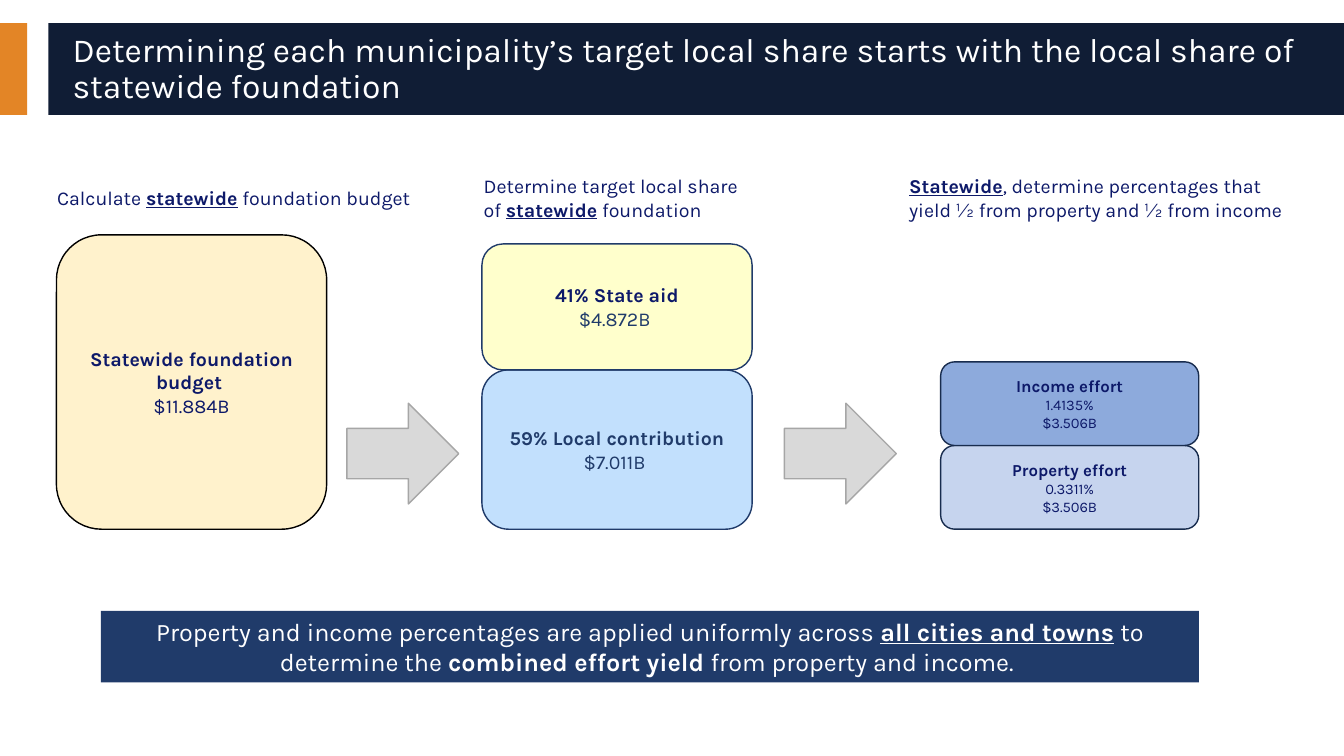
"""Build the slide on the target local share of the statewide foundation budget."""
from dataclasses import dataclass

from pptx import Presentation
from pptx.dml.color import RGBColor
from pptx.enum.shapes import MSO_SHAPE
from pptx.enum.text import MSO_ANCHOR, MSO_AUTO_SIZE, PP_ALIGN
from pptx.util import Inches, Pt

RECT = MSO_SHAPE.RECTANGLE
ROUND = MSO_SHAPE.ROUNDED_RECTANGLE
ARROW = MSO_SHAPE.RIGHT_ARROW
LEFT, CENTER = PP_ALIGN.LEFT, PP_ALIGN.CENTER
MIDDLE = MSO_ANCHOR.MIDDLE
FIXED, GROW = MSO_AUTO_SIZE.NONE, MSO_AUTO_SIZE.SHAPE_TO_FIT_TEXT

FONT = "Karla"
INK, NAVY, WHITE = "0D1969", "203B6A", "FFFFFF"
EFFORT_LINE = "182C4E"
BASELINE = 5.25
BAR_TOP, BAR_HEIGHT = 0.23, 0.91
LABEL_TOP, LABEL_HEIGHT = 1.67, 0.58
ARROW_LEFTS = (3.44, 7.78)


@dataclass(frozen=True)
class Span:
    """A stretch of text in one format."""
    text: str
    size: float = 14
    color: str = INK
    bold: bool = False
    underline: bool = False


@dataclass(frozen=True)
class Block:
    """A shape with its place, colours and paragraphs of spans."""
    left: float
    top: float
    width: float
    height: float
    kind: int = RECT
    fill: str = ""
    line: str = ""
    paras: tuple = ()
    align: int = CENTER
    fit: int = FIXED


@dataclass(frozen=True)
class Layer:
    """One box of a stack: height, colour and paragraphs."""
    height: float
    fill: str
    paras: tuple


@dataclass(frozen=True)
class Stack:
    """Boxes piled upward from the baseline."""
    left: float
    width: float
    line: str
    layers: tuple


def color(code: str) -> RGBColor:
    """Turn a hex string into a colour."""
    return RGBColor.from_string(code)


def write(frame, paras: tuple, align: int, spacing: float = 1.0) -> None:
    """Fill a text frame with formatted paragraphs."""
    for index, spans in enumerate(paras):
        para = frame.paragraphs[0] if index == 0 else frame.add_paragraph()
        para.alignment, para.line_spacing = align, spacing
        for span in spans:
            for number, piece in enumerate(span.text.split("\n")):
                if number:
                    para.add_line_break()
                run = para.add_run()
                run.text = piece
                formats = {"name": FONT, "size": Pt(span.size),
                           "bold": span.bold, "underline": span.underline}
                for name, value in formats.items():
                    setattr(run.font, name, value)
                run.font.color.rgb = color(span.color)


def draw(page, block: Block) -> None:
    """Add one block to the page."""
    place = (block.left, block.top, block.width, block.height)
    box = page.shapes.add_shape(block.kind, *map(Inches, place))
    box.shadow.inherit = False
    if block.fill:
        box.fill.solid()
        box.fill.fore_color.rgb = color(block.fill)
    else:
        box.fill.background()
    if block.line:
        box.line.color.rgb = color(block.line)
        box.line.width = Pt(1)
    else:
        box.line.fill.background()
    if block.paras:
        frame = box.text_frame
        settings = {"word_wrap": True, "vertical_anchor": MIDDLE, "auto_size": block.fit}
        for name, value in settings.items():
            setattr(frame, name, value)
        write(frame, block.paras, block.align)


def draw_stack(page, stack: Stack) -> None:
    """Pile the layers of a stack up from the baseline."""
    top = BASELINE
    for layer in stack.layers:
        top -= layer.height
        draw(page, Block(stack.left, top, stack.width, layer.height, ROUND,
                         layer.fill, stack.line, layer.paras))


def draw_title(page, text: str) -> None:
    """Place and format the title."""
    title = page.shapes.title
    place = {"left": 0.62, "top": 0.32, "width": 12.44, "height": 0.74}
    for name, value in place.items():
        setattr(title, name, Inches(value))
    frame = title.text_frame
    settings = {"word_wrap": True, "vertical_anchor": MIDDLE, "auto_size": FIXED}
    for name, value in settings.items():
        setattr(frame, name, value)
    write(frame, ((Span(text, 24, WHITE),),), LEFT, 0.9)


def amount(heading: str, value: str, heading_color: str = INK, value_color: str = INK) -> tuple:
    """Give a bold heading over a plain dollar value."""
    return ((Span(heading, color=heading_color, bold=True),),
            (Span(value, color=value_color),))


def effort(heading: str, rate: str) -> tuple:
    """Give a bold effort heading over its rate and yield."""
    return ((Span(heading, 12, bold=True),), (Span(rate, 10.5),), (Span("$3.506B", 10.5),))


BARS = (Block(0, BAR_TOP, 0.27, BAR_HEIGHT, fill="E38526"),
        Block(0.48, BAR_TOP, 12.85, BAR_HEIGHT, fill="101D35"))

LABELS = (
    (0.44, 3.89, (Span("Calculate "), Span("statewide", bold=True, underline=True),
                  Span(" foundation budget"))),
    (4.67, 3.89, (Span("Determine target local share \nof "),
                  Span("statewide", bold=True, underline=True), Span(" foundation"))),
    (8.89, 4, (Span("Statewide", bold=True, underline=True),
               Span(", determine percentages that yield ½ from property and ½ from income"))),
)

STACKS = (
    Stack(0.56, 2.68, "000000", (
        Layer(2.92, "FFF2CC", amount("Statewide foundation budget ", "$11.884B")),)),
    Stack(4.78, 2.68, NAVY, (
        Layer(1.58, "C2E0FD", amount("59% Local contribution", "$7.011B ", NAVY, NAVY)),
        Layer(1.25, "FFFFCC", amount("41% State aid", "$4.872B ", INK, NAVY)))),
    Stack(9.33, 2.56, EFFORT_LINE, (
        Layer(0.83, "C6D4EE", effort("Property effort", "0.3311%")),
        Layer(0.83, "8DAADC", effort("Income effort", "1.4135%")))),
)

BANNER = Block(1, 6.06, 10.89, 0.71, fill=NAVY, fit=GROW, paras=((
    Span("Property and income percentages are applied uniformly across ", 18, WHITE),
    Span("all cities and towns", 18, WHITE, True, True),
    Span(" to determine the ", 18, WHITE),
    Span("combined effort yield ", 18, WHITE, True),
    Span("from property and income. ", 18, WHITE)),))


def main() -> None:
    """Build and save the deck."""
    deck = Presentation()
    deck.slide_width, deck.slide_height = Inches(13.33), Inches(7.5)
    page = deck.slides.add_slide(deck.slide_layouts[5])
    for bar in BARS:
        draw(page, bar)
    tree = page.shapes.title.element.getparent()
    tree.append(page.shapes.title.element)
    draw_title(page, "Determining each municipality’s target local share starts "
                     "with the local share of statewide foundation")
    for left, width, spans in LABELS:
        draw(page, Block(left, LABEL_TOP, width, LABEL_HEIGHT, ROUND,
                         paras=(spans,), align=LEFT))
    for stack in STACKS:
        draw_stack(page, stack)
    for left in ARROW_LEFTS:
        draw(page, Block(left, 4, 1.11, 1, ARROW, "D9D9D9", "A6A6A6"))
    draw(page, BANNER)
    deck.save("out.pptx")


if __name__ == "__main__":
    main()
